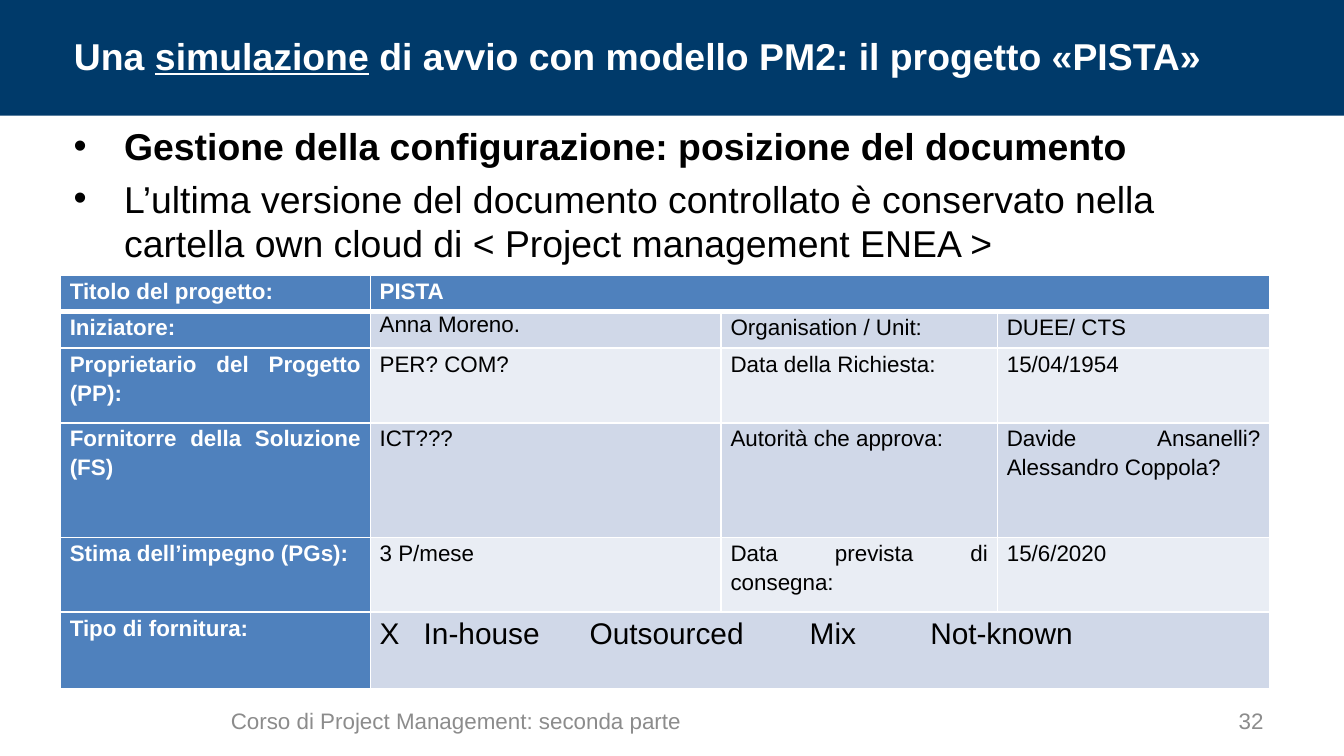
"""Build the project start-up slide with its title, bullets, initiation table and footer."""
from dataclasses import dataclass

from lxml import etree
from pptx import Presentation
from pptx.dml.color import RGBColor
from pptx.enum.shapes import MSO_SHAPE
from pptx.enum.text import MSO_ANCHOR, PP_ALIGN
from pptx.oxml.ns import qn
from pptx.presentation import Presentation as PresentationType
from pptx.slide import Slide
from pptx.table import _Cell
from pptx.text.text import TextFrame, _Paragraph, _Run
from pptx.util import Pt

LEFT, RIGHT, JUSTIFY = PP_ALIGN.LEFT, PP_ALIGN.RIGHT, PP_ALIGN.JUSTIFY
MIDDLE, TOP = MSO_ANCHOR.MIDDLE, MSO_ANCHOR.TOP
RECTANGLE = MSO_SHAPE.RECTANGLE


@dataclass(frozen=True)
class Theme:
    font: str = "Arial"
    navy: str = "003A6A"
    blue: str = "4F81BD"
    dark_band: str = "D0D8E8"
    light_band: str = "E9EDF4"
    white: str = "FFFFFF"
    black: str = "000000"
    grey: str = "8C8C8C"
    heading_size: float = 20
    choice_size: float = 16
    small_size: float = 12


@dataclass(frozen=True)
class Box:
    left: float
    top: float
    width: float
    height: float

    def lengths(self) -> tuple[Pt, Pt, Pt, Pt]:
        return Pt(self.left), Pt(self.top), Pt(self.width), Pt(self.height)


@dataclass(frozen=True)
class Bullet:
    text: str
    bold: bool
    space_before: float


@dataclass(frozen=True)
class Caption:
    text: str
    box: Box
    alignment: PP_ALIGN


@dataclass(frozen=True)
class Row:
    height: float
    texts: tuple[str, ...]


THEME = Theme()
BAND_BOX = Box(0, 0, 720, 62)
TITLE_BOX = Box(32.4, 13.5, 648, 32)
BODY_BOX = Box(32.4, 62.6, 648, 85)
TABLE_BOX = Box(32.4, 147.6, 648, 221.5)
TITLE_PARTS = (
    ("Una ", False),
    ("simulazione", True),
    (" di avvio con modello PM2: il progetto «PISTA»", False),
)
BULLETS = (
    Bullet("Gestione della configurazione: posizione del documento", True, 0),
    Bullet("L’ultima versione del documento controllato è conservato nella cartella "
           "own cloud di < Project management ENEA >", False, 4),
)
COLUMN_WIDTHS = (166, 188, 148, 146)
ROWS = (
    Row(19.5, ("Titolo del progetto:", "PISTA")),
    Row(19.5, ("Iniziatore:", "Anna Moreno.", "Organisation / Unit:", "DUEE/ CTS")),
    Row(40, ("Proprietario del Progetto (PP):", "PER? COM?", "Data della Richiesta:", "15/04/1954")),
    Row(61.5, ("Fornitorre della Soluzione (FS)", "ICT???", "Autorità che approva:",
               "Davide Ansanelli? Alessandro Coppola?")),
    Row(40, ("Stima dell’impegno (PGs):", "3 P/mese", "Data prevista di consegna:", "15/6/2020")),
    Row(41, ("Tipo di fornitura:", "X\tIn-house\tOutsourced\tMix\tNot-known")),
)
CHOICE_TABS = (23.6, 112.5, 230.4, 295)
SINGLE_SPACED_CELL = (1, 1)
CAPTIONS = (
    Caption("Corso di Project Management: seconda parte", Box(116.6, 375, 520, 21.6), LEFT),
    Caption("32", Box(640.8, 375, 43.2, 21.6), RIGHT),
)


def format_run(run: _Run, size: float, color: str, bold: bool = False, underline: bool = False) -> None:
    font = run.font
    font.name, font.size = THEME.font, Pt(size)
    font.bold, font.underline = bold, underline
    font.color.rgb = RGBColor.from_string(color)


def prepare_frame(frame: TextFrame, anchor: MSO_ANCHOR) -> None:
    frame.word_wrap = True
    frame.vertical_anchor = anchor
    frame.margin_left = frame.margin_right = Pt(7.2)
    frame.margin_top = frame.margin_bottom = Pt(3.6)


def draw_title(slide: Slide) -> None:
    band = slide.shapes.add_shape(RECTANGLE, *BAND_BOX.lengths())
    band.shadow.inherit = False
    band.fill.solid()
    band.fill.fore_color.rgb = RGBColor.from_string(THEME.navy)
    band.line.fill.background()
    title = slide.shapes.title
    band._element.addnext(title._element)
    title.left, title.top, title.width, title.height = TITLE_BOX.lengths()
    prepare_frame(title.text_frame, MIDDLE)
    paragraph = title.text_frame.paragraphs[0]
    paragraph.alignment = LEFT
    for text, underline in TITLE_PARTS:
        run = paragraph.add_run()
        run.text = text
        format_run(run, THEME.heading_size, THEME.white, True, underline)


def add_bullet(paragraph: _Paragraph, indent: float) -> None:
    properties = paragraph._p.get_or_add_pPr()
    properties.set("marL", str(Pt(indent)))
    properties.set("indent", str(-Pt(indent)))
    etree.SubElement(properties, qn("a:buFont"), typeface=THEME.font)
    etree.SubElement(properties, qn("a:buChar"), char="•")


def draw_bullets(slide: Slide) -> None:
    frame = slide.shapes.add_textbox(*BODY_BOX.lengths()).text_frame
    prepare_frame(frame, TOP)
    frame.text = "\n".join(bullet.text for bullet in BULLETS)
    for paragraph, bullet in zip(frame.paragraphs, BULLETS):
        add_bullet(paragraph, 27)
        paragraph.space_before = Pt(bullet.space_before)
        format_run(paragraph.runs[0], THEME.heading_size, THEME.black, bullet.bold)


def add_tabs(paragraph: _Paragraph) -> None:
    tabs = etree.SubElement(paragraph._p.get_or_add_pPr(), qn("a:tabLst"))
    for position in CHOICE_TABS:
        etree.SubElement(tabs, qn("a:tab"), pos=str(Pt(position)), algn="l")


def format_cell(cell: _Cell, row: int, column: int) -> None:
    properties = cell._tc.get_or_add_tcPr()
    for side in "LRTB":
        heavy = (row, side) in ((0, "B"), (1, "T"))
        line = etree.SubElement(properties, qn(f"a:ln{side}"), w=str(Pt(3 if heavy else 1)))
        fill = etree.SubElement(line, qn("a:solidFill"))
        etree.SubElement(fill, qn("a:srgbClr"), val=THEME.white)
    is_heading = row == 0 or column == 0
    band_color = THEME.dark_band if row % 2 else THEME.light_band
    if row == len(ROWS) - 1:
        band_color = THEME.dark_band
    cell.fill.solid()
    cell.fill.fore_color.rgb = RGBColor.from_string(THEME.blue if is_heading else band_color)
    cell.margin_left = cell.margin_right = Pt(5)
    cell.margin_top = cell.margin_bottom = Pt(0)


def write_cell(cell: _Cell, text: str, row: int, column: int) -> None:
    cell.text_frame.text = text
    paragraph = cell.text_frame.paragraphs[0]
    has_choices = "\t" in text
    if has_choices:
        add_tabs(paragraph)
    paragraph.alignment = JUSTIFY
    paragraph.line_spacing = 1.0 if (row, column) == SINGLE_SPACED_CELL else 1.15
    is_heading = row == 0 or column == 0
    size = THEME.choice_size if has_choices else THEME.small_size
    format_run(paragraph.runs[0], size, THEME.white if is_heading else THEME.black, is_heading)


def draw_table(slide: Slide) -> None:
    table = slide.shapes.add_table(len(ROWS), len(COLUMN_WIDTHS), *TABLE_BOX.lengths()).table
    for column, width in zip(table.columns, COLUMN_WIDTHS):
        column.width = Pt(width)
    for row_index, row in enumerate(ROWS):
        table.rows[row_index].height = Pt(row.height)
        for column_index in range(len(COLUMN_WIDTHS)):
            format_cell(table.cell(row_index, column_index), row_index, column_index)
        for column_index, text in enumerate(row.texts):
            write_cell(table.cell(row_index, column_index), text, row_index, column_index)
        if len(row.texts) == 2:
            table.cell(row_index, 1).merge(table.cell(row_index, 3))


def draw_caption(slide: Slide, caption: Caption) -> None:
    frame = slide.shapes.add_textbox(*caption.box.lengths()).text_frame
    prepare_frame(frame, MIDDLE)
    frame.text = caption.text
    frame.paragraphs[0].alignment = caption.alignment
    format_run(frame.paragraphs[0].runs[0], THEME.small_size, THEME.grey)


def build() -> PresentationType:
    presentation = Presentation()
    presentation.slide_width, presentation.slide_height = Pt(720), Pt(405)
    slide = presentation.slides.add_slide(presentation.slide_layouts[5])
    draw_title(slide)
    draw_bullets(slide)
    draw_table(slide)
    for caption in CAPTIONS:
        draw_caption(slide, caption)
    return presentation


if __name__ == "__main__":
    build().save("out.pptx")
